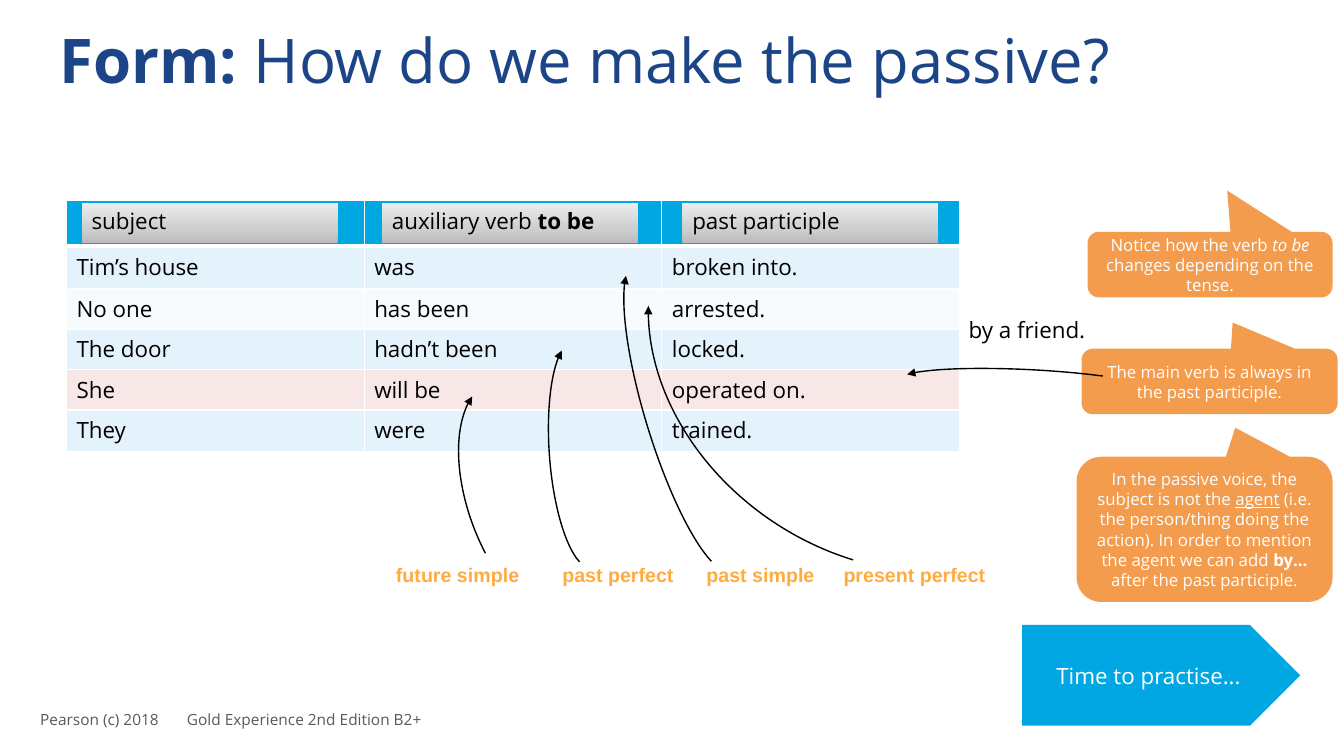
"""Build the slide that explains the form of the passive voice."""
from copy import deepcopy
from dataclasses import dataclass, field

from lxml import etree
from pptx import Presentation
from pptx import util as u
from pptx.dml.color import RGBColor
from pptx.enum import shapes, text
from pptx.oxml.ns import qn

COLS, ROWS = 40, 24
SLIDE_W, SLIDE_H = u.Inches(13.333), u.Inches(7.5)
COLORS = {
    "navy": "1C4587", "cyan": "00A7E3", "sky": "CBE6F9", "pink": "F7E8E7",
    "orange": "F49C4E", "amber": "FFAB40", "grey": "595959",
    "black": "000000", "white": "FFFFFF",
    "silver_low": "BBBBBB", "silver_mid": "CFCFCF", "silver_high": "EDEDED",
}
SILVER_STOPS = ((0, "silver_low"), (0.35, "silver_mid"), (1, "silver_high"))
FORMATS = {
    "title": {"name": "Open Sans", "size": u.Pt(44), "color": "navy"},
    "body": {"name": "Open Sans", "size": u.Pt(16), "color": "black"},
    "button": {"name": "Open Sans", "size": u.Pt(16), "color": "white"},
    "note": {"name": "Open Sans", "size": u.Pt(12), "color": "white"},
    "tense": {"name": "Arial", "size": u.Pt(14), "color": "amber", "bold": True},
    "footer": {"name": "Open Sans", "size": u.Pt(11), "color": "grey"},
}
BOLD, ITALIC, UNDERLINE = {"bold": True}, {"italic": True}, {"underline": True}
Run = tuple[str, dict]


@dataclass
class Box:
    """A frame in grid columns and rows."""
    col: float
    row: float
    cols: float
    rows: float

    def place(self) -> tuple[int, int, int, int]:
        return x(self.col), y(self.row), x(self.cols), y(self.rows)


@dataclass
class Panel:
    """A filled shape with centred text."""
    box: Box
    runs: list[Run]
    adj: tuple[float, ...]
    kind: int = shapes.MSO_SHAPE.ROUNDED_RECTANGULAR_CALLOUT
    fill: str = "orange"
    style: str = "note"


@dataclass
class Arc:
    """A curved arrow; angles are in degrees."""
    box: Box
    rotation: float
    start: float
    end: float
    flip: bool = False


@dataclass
class Label:
    """A plain text box."""
    box: Box
    text: str
    style: str
    tabs: list[float] = field(default_factory=list)
    anchor: int = text.MSO_ANCHOR.TOP


def x(cols: float) -> int:
    return round(SLIDE_W * cols / COLS)


def y(rows: float) -> int:
    return round(SLIDE_H * rows / ROWS)


def rgb(name: str) -> RGBColor:
    return RGBColor.from_string(COLORS[name])


def write(tf, runs: list[Run], style: str, align=text.PP_ALIGN.LEFT):
    p = tf.paragraphs[0]
    p.alignment = align
    for words, extra in runs:
        r = p.add_run()
        r.text = words
        for key, value in (FORMATS[style] | extra).items():
            if key == "color":
                r.font.color.rgb = rgb(value)
            else:
                setattr(r.font, key, value)
    return p


def add_shape(s, kind, box: Box, adj: tuple[float, ...] = ()):
    sp = s.shapes.add_shape(kind, *box.place())
    sp.shadow.inherit = False
    for i, value in enumerate(adj):
        sp.adjustments[i] = value
    return sp


def add_panel(s, panel: Panel) -> None:
    sp = add_shape(s, panel.kind, panel.box, panel.adj)
    sp.fill.solid()
    sp.fill.fore_color.rgb = rgb(panel.fill)
    sp.line.fill.background()
    sp.text_frame.vertical_anchor = text.MSO_ANCHOR.MIDDLE
    write(sp.text_frame, panel.runs, panel.style, text.PP_ALIGN.CENTER)


def add_heading(s, index: int, runs: list[Run]) -> None:
    sp = add_shape(s, shapes.MSO_SHAPE.RECTANGLE, Box(2.43 + 8.94 * index, 6.43, 7.62, 1.28))
    sp.line.fill.background()
    sp.fill.gradient()
    sp.fill.gradient_angle = 90
    first = next(sp._element.iter(qn("a:gs")))
    first.addnext(deepcopy(first))
    for stop, (position, color) in zip(sp.fill.gradient_stops, SILVER_STOPS):
        stop.position = position
        stop.color.rgb = rgb(color)
    sp.text_frame.vertical_anchor = text.MSO_ANCHOR.TOP
    write(sp.text_frame, runs, "body")


def add_arc(s, arc: Arc) -> None:
    sp = add_shape(s, shapes.MSO_SHAPE.ARC, arc.box, (arc.start * 0.6, arc.end * 0.6))
    sp.rotation = arc.rotation
    sp.fill.background()
    sp.line.color.rgb = rgb("black")
    sp.line.width = u.Pt(1)
    etree.SubElement(sp.line._get_or_add_ln(), qn("a:tailEnd"), type="triangle")
    if arc.flip:
        sp._element.spPr.find(qn("a:xfrm")).set("flipH", "1")


def add_label(s, label: Label) -> None:
    tf = s.shapes.add_textbox(*label.box.place()).text_frame
    tf.word_wrap = True
    tf.vertical_anchor = label.anchor
    tf.margin_top = tf.margin_bottom = u.Inches(0.1)
    p = write(tf, [(label.text, {})], label.style)
    if label.tabs:
        tabs = etree.SubElement(p._p.get_or_add_pPr(), qn("a:tabLst"))
        for stop in label.tabs:
            etree.SubElement(tabs, qn("a:tab"), pos=str(x(stop)), algn="l")


def format_cell(cell, fill: str, alpha: int, bottom: float) -> None:
    cell.fill.solid()
    cell.fill.fore_color.rgb = rgb(fill)
    tcPr = cell._tc.get_or_add_tcPr()
    if alpha < 100:
        color = next(tcPr.iter(qn("a:srgbClr")))
        etree.SubElement(color, qn("a:alpha"), val=str(alpha * 1000))
    for i, (side, width) in enumerate(zip("LRTB", (1, 1, 1, bottom))):
        ln = etree.Element(qn(f"a:ln{side}"), w=str(u.Pt(width)))
        solid = etree.SubElement(ln, qn("a:solidFill"))
        etree.SubElement(solid, qn("a:srgbClr"), val=COLORS["white"])
        tcPr.insert(i, ln)


def add_passive_table(s) -> None:
    rows = [
        (1.45, "cyan", 100, ("", "", "")),
        (1.34, "sky", 50, ("Tim’s house", "was", "broken into.")),
        (1.18, "sky", 15, ("No one", "has been", "arrested.")),
        (1.15, "sky", 50, ("The door", "hadn’t been", "locked.")),
        (1.15, "pink", 100, ("She", "will be", "operated on.")),
        (1.31, "sky", 50, ("They", "were", "trained.")),
    ]
    box = Box(1.98, 6.37, 26.58, sum(row[0] for row in rows))
    table = s.shapes.add_table(len(rows), 3, *box.place()).table
    table.first_row = table.horz_banding = False
    for i, (height, fill, alpha, words) in enumerate(rows):
        table.rows[i].height = y(height)
        for cell, word in zip(table.rows[i].cells, words):
            format_cell(cell, fill, alpha, 1 if i else 3)
            if word:
                write(cell.text_frame, [(word, {})], "body")


def main() -> None:
    prs = Presentation()
    prs.slide_width, prs.slide_height = SLIDE_W, SLIDE_H
    s = prs.slides.add_slide(prs.slide_layouts[5])
    title = s.shapes.title
    title.left, title.top, title.width, title.height = Box(1.47, 0.8, 35.37, 4.61).place()
    title.text_frame.vertical_anchor = text.MSO_ANCHOR.TOP
    p = write(title.text_frame, [("Form: ", BOLD), ("How do we make the passive?", {})], "title")
    p.line_spacing = 0.9

    add_passive_table(s)
    headings = [[("subject", {})], [("auxiliary verb ", {}), ("to be", BOLD)], [("past participle", {})]]
    for i, runs in enumerate(headings):
        add_heading(s, i, runs)
    for panel in (
        Panel(Box(32.37, 7.36, 7.29, 2.08),
              [("Notice how the verb ", {}), ("to be ", ITALIC),
               ("changes depending on the tense.", {})], (0.07, -1.13, 0.17)),
        Panel(Box(32.19, 11.07, 7.62, 2.08),
              [("The main verb is always in the past participle.", {})], (0.09, -0.9, 0.17)),
        Panel(Box(32.04, 14.5, 7.62, 4.61),
              [("In the passive voice, the subject is not the ", {}), ("agent", UNDERLINE),
               (" (i.e. the person/thing doing the action). In order to mention the agent we can add ", {}),
               ("by… ", BOLD), ("after the past participle.", {})], (0.12, -0.7, 0.17)),
        Panel(Box(30.42, 19.84, 8.28, 3.2), [("Time to practise...", {})], (0.5,),
              shapes.MSO_SHAPE.PENTAGON, "cyan", "button"),
    ):
        add_panel(s, panel)
    for arc in (
        Arc(Box(12.12, 13.79, 7.77, 4.35), 249, 247.19, 349.36),
        Arc(Box(13.95, 13.34, 6.81, 2.14), 265.7, 186.19, 352.61),
        Arc(Box(15.51, 12.03, 9.66, 2.37), 252.9, 186.19, 354.86),
        Arc(Box(18.87, 4.86, 14.91, 12.77), 213.9, 244.78, 337.67),
        Arc(Box(26.76, 11.74, 7.89, 1.06), 3, 191.35, 357.46, True),
    ):
        add_arc(s, arc)
    tenses = {"future simple": 11.49, "past perfect": 16.44, "past simple": 20.73, "present perfect": 24.81}
    for tense, col in tenses.items():
        add_label(s, Label(Box(col, 17.55, 5.43, 1.12), tense, "tense"))
    add_label(s, Label(Box(28.53, 9.73, 4.35, 2.08), "by a friend.", "body"))
    add_label(s, Label(Box(0.9, 22.21, 20.76, 1.28), "Pearson (c) 2018\tGold Experience 2nd Edition B2+",
                       "footer", [4.37], text.MSO_ANCHOR.MIDDLE))
    prs.save("out.pptx")


if __name__ == "__main__":
    main()
